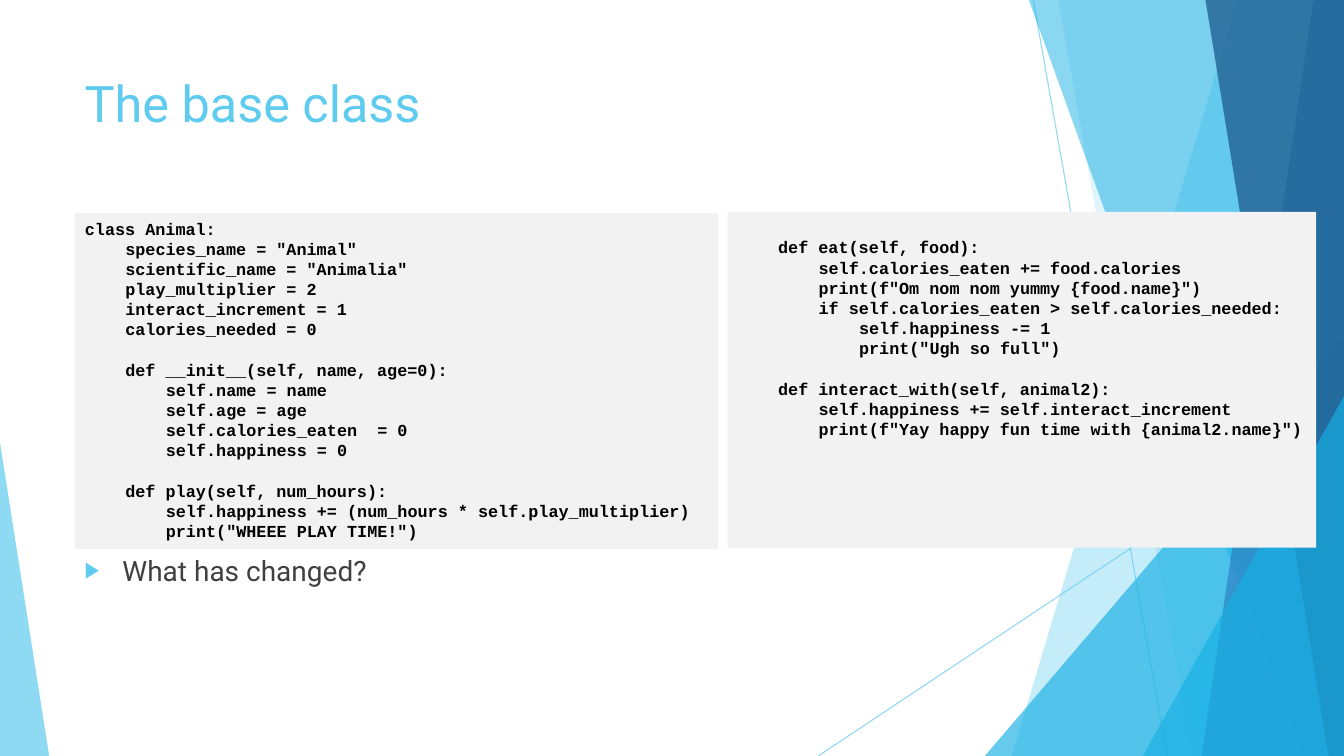
import pptx
import pptx.util
import pptx.dml.color
import pptx.enum.shapes
import pptx.enum.text
import pptx.oxml.ns
from lxml import etree

Cm, Pt = pptx.util.Cm, pptx.util.Pt
RGB = pptx.dml.color.RGBColor
Kind = pptx.enum.shapes.MSO_SHAPE
Text = pptx.enum.text
qn = pptx.oxml.ns.qn

SKY = RGB(0x5F, 0xCB, 0xEF)
AQUA = RGB(0x17, 0xB0, 0xE4)
BLUE = RGB(0x2E, 0x83, 0xC3)
NAVY = RGB(0x22, 0x62, 0x92)
GREY = RGB(0xF2, 0xF2, 0xF2)
DARK = RGB(0x40, 0x40, 0x40)
BLACK = RGB(0, 0, 0)
WIDE, HIGH = 33.87, 19.05

FIELDS = '''class Animal:
    species_name = "Animal"
    scientific_name = "Animalia"
    play_multiplier = 2
    interact_increment = 1
    calories_needed = 0

    def __init__(self, name, age=0):
        self.name = name
        self.age = age
        self.calories_eaten  = 0
        self.happiness = 0

    def play(self, num_hours):
        self.happiness += (num_hours * self.play_multiplier)
        print("WHEEE PLAY TIME!")'''

ACTIONS = '''    def eat(self, food):
        self.calories_eaten += food.calories
        print(f"Om nom nom yummy {food.name}")
        if self.calories_eaten > self.calories_needed:
            self.happiness -= 1
            print("Ugh so full")

    def interact_with(self, animal2):
        self.happiness += self.interact_increment
        print(f"Yay happy fun time with {animal2.name}")'''


class Deck:
    sans, mono = "Roboto", "Courier New"
    row = Pt(14.4)   # height of a code line
    tab = Cm(1.02)   # four code characters

    def __init__(self):
        self.show = pptx.Presentation()
        self.show.slide_width, self.show.slide_height = Cm(WIDE), Cm(HIGH)
        self.slide = self.show.slides.add_slide(self.show.slide_layouts[1])
        self.shapes = self.slide.shapes

    def fade(self, part, alpha):
        tint = part.find(".//" + qn("a:srgbClr"))
        etree.SubElement(tint, qn("a:alpha"), val=str(alpha * 1000))

    def paint(self, shape, color, alpha=100):
        shape.shadow.inherit = False
        shape.fill.solid()
        shape.fill.fore_color.rgb = color
        shape.line.fill.background()
        if alpha < 100:
            self.fade(shape.fill._xPr, alpha)

    def line(self, *ends):
        line = self.shapes.add_connector(
            pptx.enum.shapes.MSO_CONNECTOR.STRAIGHT, *map(Cm, ends))
        line.line.color.rgb = SKY
        line.line.width = Pt(0.75)
        props = line._element.spPr
        self.fade(props, 70)
        etree.SubElement(props, qn("a:effectLst"))

    def band(self, top, foot, color, alpha):
        """Strip from a slanted left side to the slide's right edge."""
        pen = self.shapes.build_freeform(Cm(top), 0)
        pen.add_line_segments([(Cm(WIDE), 0), (Cm(WIDE), Cm(HIGH)),
                               (Cm(foot), Cm(HIGH))], close=True)
        self.paint(pen.convert_to_shape(), color, alpha)

    def wedge(self, left, top, width, tip, color, alpha):
        """Triangle standing on the slide's bottom edge."""
        shape = self.shapes.add_shape(
            Kind.ISOSCELES_TRIANGLE, Cm(left), Cm(top), Cm(width), Cm(HIGH - top))
        shape.adjustments[0] = tip
        self.paint(shape, color, alpha)

    def holder(self, shape, box, text, size, color):
        shape.left, shape.top, shape.width, shape.height = map(Cm, box)
        frame = shape.text_frame
        frame.text = text
        frame.auto_size = Text.MSO_AUTO_SIZE.NONE
        frame.vertical_anchor = Text.MSO_ANCHOR.TOP
        para = frame.paragraphs[0]
        para.alignment = Text.PP_ALIGN.LEFT
        para.space_before = Pt(0)
        self.style(para.font, self.sans, size, color)
        return para

    def style(self, font, name, size, color, bold=False):
        font.name, font.size, font.bold = name, Pt(size), bold
        font.color.rgb = color

    def title(self, box, text):
        self.holder(self.shapes.title, box, text, 36, SKY)

    def bullet(self, box, text):
        para = self.holder(self.slide.placeholders[1], box, text, 20, DARK)
        props = para._p.get_or_add_pPr()
        props.set("marL", str(Cm(0.95)))
        props.set("indent", str(-Cm(0.95)))
        color = etree.SubElement(props, qn("a:buClr"))
        etree.SubElement(color, qn("a:srgbClr"), val=str(SKY))
        etree.SubElement(props, qn("a:buSzPct"), val="80000")
        etree.SubElement(props, qn("a:buChar"), char="▶")
        # Bullet settings come before the default run style
        props.append(props.find(qn("a:defRPr")))

    def code(self, box, text, skip=0):
        shape = self.shapes.add_shape(Kind.RECTANGLE, *map(Cm, box))
        self.paint(shape, GREY)
        frame = shape.text_frame
        frame.word_wrap = True
        frame.vertical_anchor = Text.MSO_ANCHOR.TOP
        frame.margin_top = Cm(0.13) + skip * self.row
        frame.margin_right = Cm(0.1)
        para, gap = frame.paragraphs[0], 0
        for line in text.splitlines():
            if not line:
                gap = self.row
                continue
            if para.text:
                para = frame.add_paragraph()
            para.text = line.lstrip()
            para.alignment = Text.PP_ALIGN.LEFT
            para.line_spacing, para.space_before = self.row, gap
            depth = (len(line) - len(para.text)) // 4
            para._p.get_or_add_pPr().set("marL", str(depth * self.tab))
            self.style(para.font, self.mono, 12, BLACK, True)
            gap = 0


def main():
    deck = Deck()

    # Slanted backdrop
    deck.line(26.04, 0, 29.41, HIGH)
    deck.line(WIDE, 10.24, 20.62, HIGH)
    deck.band(31.19, 25.5, SKY, 36)
    deck.band(26.67, 30.05, SKY, 20)
    deck.wedge(24.82, 8.46, 9.05, 1, AQUA, 66)
    deck.band(25.93, 32.79, AQUA, 50)
    deck.band(33.1, 30.28, BLUE, 70)
    deck.band(30.38, 33.48, NAVY, 80)
    deck.wedge(28.8, 9.98, 5.07, 1, AQUA, 66)
    deck.wedge(0, 11.15, 1.24, 0, SKY, 70)

    # Title and question
    deck.title((1.88, 1.7, 23.88, 3.66), "The base class")
    deck.bullet((1.88, 13.82, 23.88, 3.99), "What has changed?")

    # Code panels
    deck.code((1.89, 5.37, 16.2, 8.46), FIELDS)
    deck.code((18.34, 5.34, 14.83, 8.46), ACTIONS, skip=1)

    deck.show.save("out.pptx")


if __name__ == "__main__":
    main()
